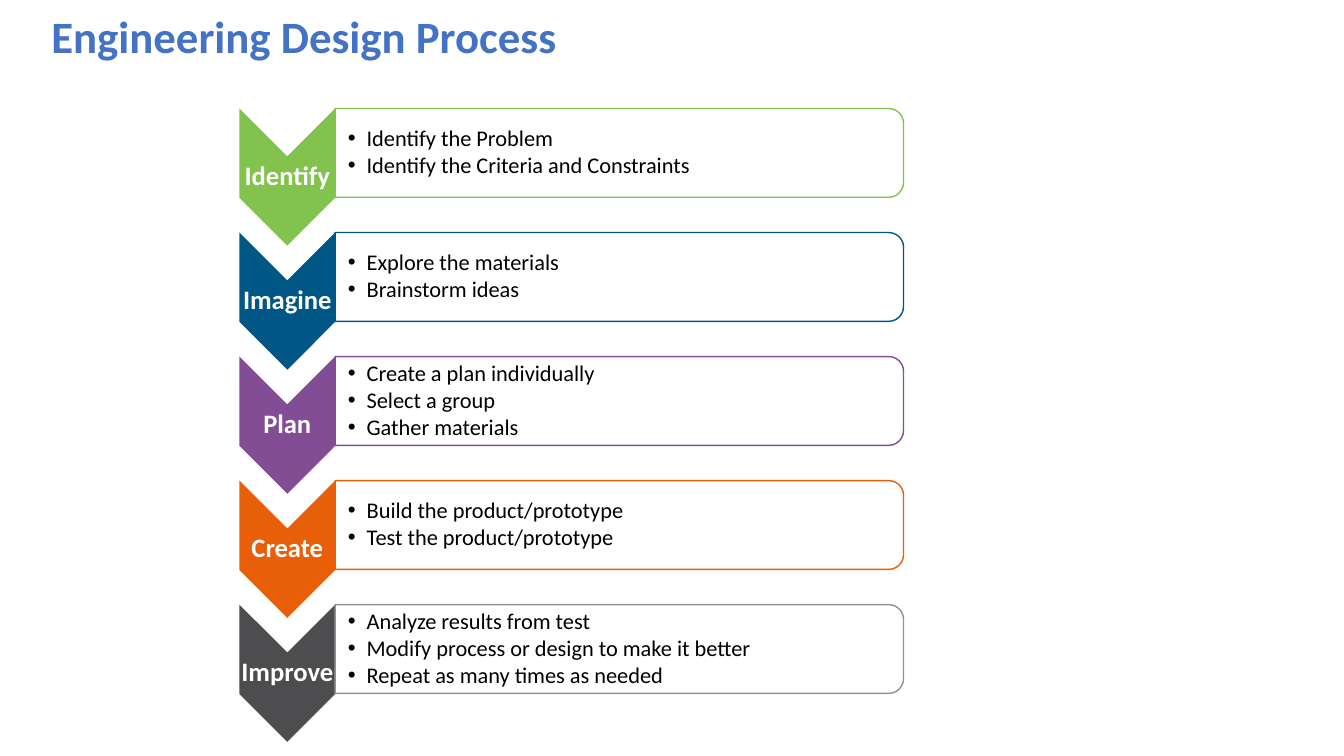
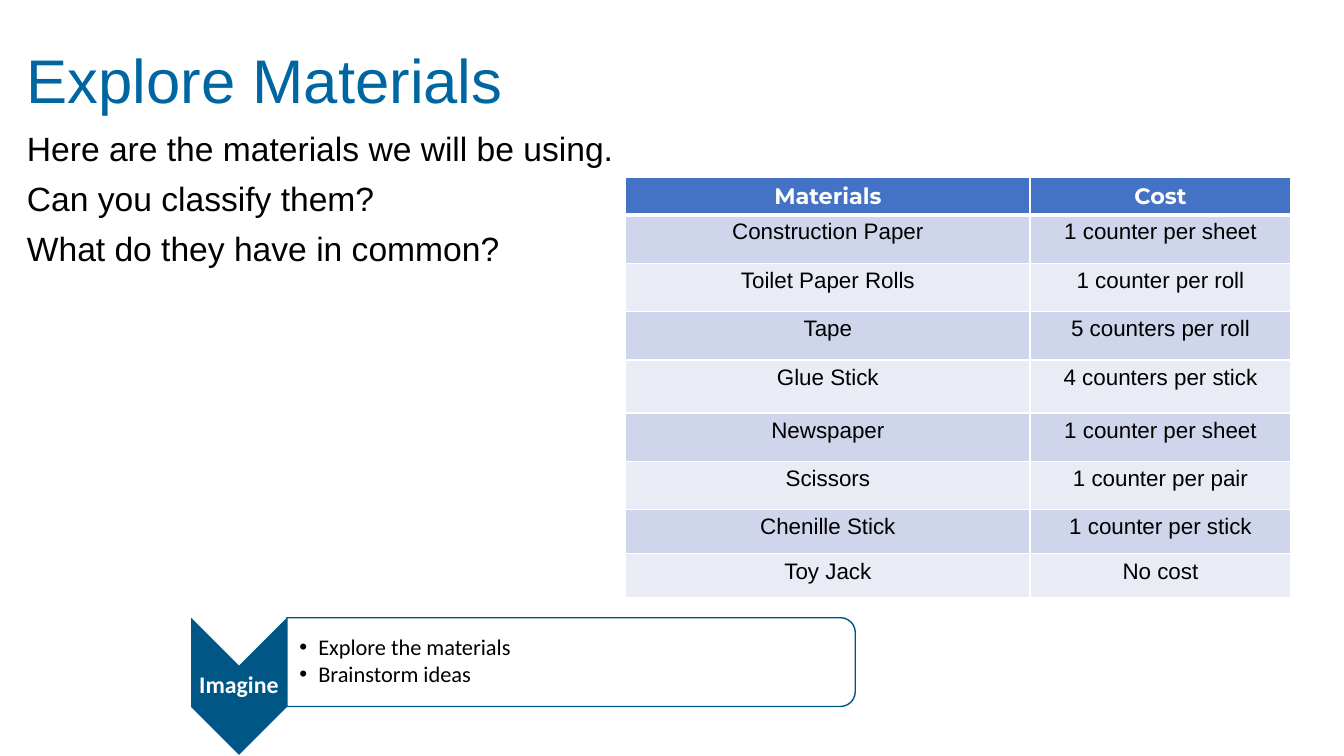
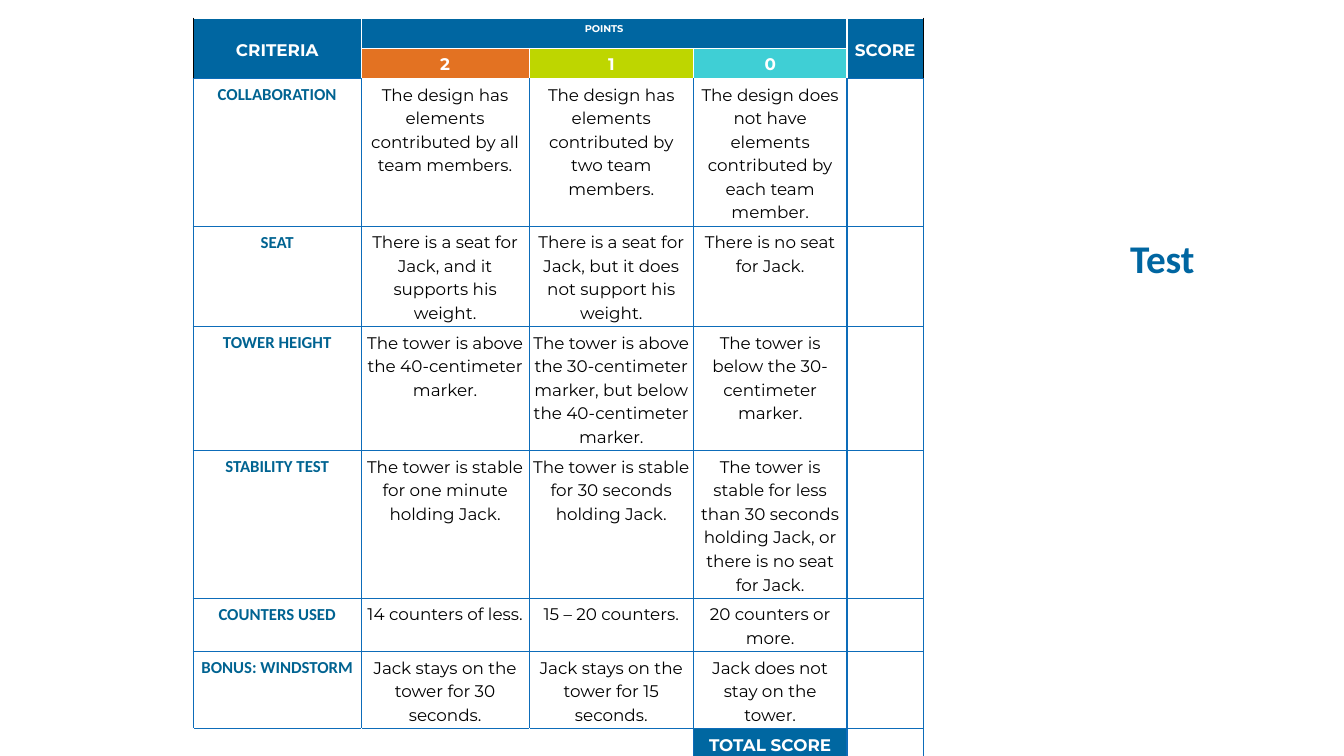
from dataclasses import dataclass

from lxml import etree
from pptx import Presentation
from pptx.dml.color import RGBColor
from pptx.enum.shapes import MSO_SHAPE
from pptx.enum.text import MSO_ANCHOR, MSO_AUTO_SIZE, PP_ALIGN
from pptx.oxml.ns import qn
from pptx.util import Pt

CHEVRON = MSO_SHAPE.CHEVRON
PANEL = MSO_SHAPE.ROUND_2_SAME_RECTANGLE
LEFT, CENTER = PP_ALIGN.LEFT, PP_ALIGN.CENTER
TOP, MIDDLE = MSO_ANCHOR.TOP, MSO_ANCHOR.MIDDLE
NO_AUTOFIT = MSO_AUTO_SIZE.NONE
TITLE_ONLY, TITLE_AND_CONTENT = 5, 1


@dataclass(frozen=True)
class TextStyle:
    font: str
    size: float
    colour: str
    bold: bool = False


class Theme:
    white, black = "FFFFFF", "000000"
    accent, navy, total, border = "4472C4", "0066A1", "0067A1", "0D6CB9"
    green, blue, purple, orange = "82C34D", "005786", "824D94", "E95E09"
    charcoal, grey = "4D4D4F", "919191"
    bands = ("CFD5EA", "E9EBF5")
    points = ("E37222", "BED600", "3FCFD5")

    process_title = TextStyle("Calibri", 32, accent, True)
    materials_title = TextStyle("Arial", 44, navy)
    test_title = TextStyle("Calibri", 28, navy, True)
    body = TextStyle("Arial", 24, black)
    step_label = TextStyle("Calibri", 19, white, True)
    small_step_label = TextStyle("Calibri", 17, white, True)
    step_list = TextStyle("Calibri", 16, black)
    materials_head = TextStyle("Montserrat", 16, white, True)
    materials_cell = TextStyle("Arial", 16, black)
    rubric_head = TextStyle("Montserrat", 12, white, True)
    rubric_points = TextStyle("Montserrat", 7, white, True)
    rubric_name = TextStyle("Calibri", 12, "006391", True)
    rubric_cell = TextStyle("Montserrat", 12, black)


def edges(colour, sides="LRTB", width=1):
    return {side: (colour, width) for side in sides}


def set_margins(target, left, top, right, bottom):
    target.margin_left, target.margin_top = Pt(left), Pt(top)
    target.margin_right, target.margin_bottom = Pt(right), Pt(bottom)


def add_bullet(para, indent):
    properties = para._p.get_or_add_pPr()
    properties.set("marL", str(Pt(indent)))
    properties.set("indent", str(-Pt(indent)))
    etree.SubElement(properties, qn("a:buFont")).set("typeface", "Arial")
    etree.SubElement(properties, qn("a:buChar")).set("char", "•")


def remove_bullet(para):
    properties = para._p.get_or_add_pPr()
    properties.set("marL", "0")
    properties.set("indent", "0")
    etree.SubElement(properties, qn("a:buNone"))


def draw_borders(cell, borders):
    properties = cell._tc.get_or_add_tcPr()
    for side in "LRTB":
        if side in borders:
            colour, width = borders[side]
            line = etree.SubElement(properties, qn("a:ln" + side))
            line.set("w", str(Pt(width)))
            fill = etree.SubElement(line, qn("a:solidFill"))
            etree.SubElement(fill, qn("a:srgbClr")).set("val", colour)


class Deck:
    CHEVRON_WIDTH, CHEVRON_HEIGHT = 68.4, 98
    PANEL_WIDTH, PANEL_HEIGHT = 406, 63.4

    def __init__(self, theme):
        self.theme = theme
        self.file = Presentation()
        self.file.slide_width, self.file.slide_height = Pt(960), Pt(540)
        self.page = None

    def add_page(self, layout):
        self.page = self.file.slides.add_slide(self.file.slide_layouts[layout])

    def format_text(self, para, style, align=LEFT, spacing=0.9):
        para.alignment, para.line_spacing = align, spacing
        for span in para.runs:
            font = span.font
            font.name, font.size, font.bold = style.font, Pt(style.size), style.bold
            font.color.rgb = RGBColor.from_string(style.colour)

    def place(self, box, left, top, width, height):
        box.left, box.top = Pt(left), Pt(top)
        box.width, box.height = Pt(width), Pt(height)

    def title(self, text, style, area, bottom_margin=3.6):
        box = self.page.shapes.title
        self.place(box, *area)
        frame = box.text_frame
        frame.text = text
        frame.word_wrap, frame.auto_size = True, NO_AUTOFIT
        frame.vertical_anchor = MIDDLE
        set_margins(frame, 7.2, 3.6, 7.2, bottom_margin)
        self.format_text(frame.paragraphs[0], style)

    def body(self, lines, area):
        box = self.page.placeholders[1]
        self.place(box, *area)
        frame = box.text_frame
        frame.text = "\n".join(lines)
        frame.word_wrap, frame.auto_size = True, NO_AUTOFIT
        frame.vertical_anchor = TOP
        for index, para in enumerate(frame.paragraphs):
            remove_bullet(para)
            para.space_before = Pt(10 if index else 0)
            self.format_text(para, self.theme.body)

    def turned_shape(self, kind, left, top, width, height):
        """Add a shape turned by 90° that covers the given area."""
        shift = (width - height) / 2
        shape = self.page.shapes.add_shape(
            kind, Pt(left + shift), Pt(top - shift), Pt(height), Pt(width))
        shape.rotation = 90
        shape.shadow.inherit = False
        shape.fill.solid()
        return shape

    def text_box(self, text, left, top, width, height, left_margin, wrap):
        box = self.page.shapes.add_textbox(Pt(left), Pt(top), Pt(width), Pt(height))
        frame = box.text_frame
        frame.word_wrap, frame.vertical_anchor = wrap, MIDDLE
        set_margins(frame, left_margin, 0.8, 0.8, 0.8)
        frame.text = text
        return frame

    def step(self, left, top, name, items, colour, outline, label_style):
        """Add a process step: a labelled chevron and its panel of bullets."""
        width, height = self.CHEVRON_WIDTH, self.CHEVRON_HEIGHT
        chevron = self.turned_shape(CHEVRON, left, top, width, height)
        chevron.fill.fore_color.rgb = RGBColor.from_string(colour)
        chevron.line.fill.background()
        label = self.text_box(name, left, top + height / 2 - 15, width, 30, 0.8, False)
        self.format_text(label.paragraphs[0], label_style, CENTER)

        panel_left = left + width
        panel = self.turned_shape(
            PANEL, panel_left, top, self.PANEL_WIDTH, self.PANEL_HEIGHT)
        panel.fill.fore_color.rgb = RGBColor.from_string(self.theme.white)
        panel.line.color.rgb = RGBColor.from_string(outline)
        panel.line.width = Pt(1)
        frame = self.text_box("\n".join(items), panel_left, top + 3,
                              self.PANEL_WIDTH - 4, self.PANEL_HEIGHT - 6, 9, True)
        for para in frame.paragraphs:
            add_bullet(para, 13.5)
            para.space_after = Pt(2)
            self.format_text(para, self.theme.step_list)

    def table(self, left, top, columns, rows):
        frame = self.page.shapes.add_table(
            len(rows), len(columns), Pt(left), Pt(top), Pt(sum(columns)), Pt(sum(rows)))
        table = frame.table
        table.first_row = table.horz_banding = False
        for column, width in zip(table.columns, columns):
            column.width = Pt(width)
        for row, height in zip(table.rows, rows):
            row.height = Pt(height)
        return table

    def cell(self, cell, text, style, fill, borders, anchor=TOP, spacing=1.0, margins=None):
        draw_borders(cell, borders)
        if fill:
            cell.fill.solid()
            cell.fill.fore_color.rgb = RGBColor.from_string(fill)
        else:
            cell.fill.background()
        cell.vertical_anchor = anchor
        if margins is not None:
            set_margins(cell, *[margins] * 4)
        cell.text = text
        para = cell.text_frame.paragraphs[0]
        self.format_text(para, style, CENTER, spacing)
        if not text:
            end = etree.SubElement(para._p, qn("a:endParaRPr"))
            end.set("sz", str(style.size * 100))

    def materials_table(self, left, top, columns, rows, records):
        theme = self.theme
        table = self.table(left, top, columns, rows)
        for row, record in enumerate(records):
            style = theme.materials_cell if row else theme.materials_head
            fill = theme.bands[(row - 1) % 2] if row else theme.accent
            borders = edges(theme.white)
            if row < 2:
                borders.update(edges(theme.white, "T" if row else "B", 3))
            for column, text in enumerate(record):
                self.cell(table.cell(row, column), text, style, fill, borders)

    def rubric_table(self, left, top, columns, rows, records):
        theme = self.theme
        table = self.table(left, top, columns, rows)
        last = len(rows) - 1

        def put(row, column, text, style, fill, borders, anchor=TOP):
            self.cell(table.cell(row, column), text, style, fill, borders, anchor, 1.15, 2.2)

        for column, text, outer in ((0, "CRITERIA", "L"), (4, "SCORE", "R")):
            borders = edges(theme.white) | edges(theme.black, outer) | edges(theme.border, "B")
            put(0, column, text, theme.rubric_head, theme.navy, borders, MIDDLE)
            put(1, column, "", theme.rubric_head, theme.navy, borders)
            table.cell(0, column).merge(table.cell(1, column))
        for column, fill in enumerate(theme.points, 1):
            put(0, column, "POINTS" if column == 1 else "", theme.rubric_points,
                theme.navy, edges(theme.white))
            put(1, column, str(3 - column), theme.rubric_head, fill, edges(theme.white))
        table.cell(0, 1).merge(table.cell(0, 3))

        for row, record in enumerate(records, 2):
            for column, text in enumerate((*record, "")):
                borders = edges(theme.border)
                if row == 2 and 0 < column < 4:
                    borders.update(edges(theme.white, "T"))
                style = theme.rubric_cell if column else theme.rubric_name
                put(row, column, text, style, None, borders)

        for column in range(3):
            put(last, column, "", theme.rubric_cell, None,
                edges(theme.border, "RT" if column == 2 else "T"))
        put(last, 3, "TOTAL SCORE", theme.rubric_head, theme.total,
            edges(theme.border), MIDDLE)
        put(last, 4, "", theme.rubric_cell, None, edges(theme.border))


IMAGINE = ("Imagine", ("Explore the materials", "Brainstorm ideas"), Theme.blue, Theme.blue)
STEPS = (
    ("Identify", ("Identify the Problem", "Identify the Criteria and Constraints"),
     Theme.green, Theme.green),
    IMAGINE,
    ("Plan", ("Create a plan individually", "Select a group", "Gather materials"),
     Theme.purple, Theme.purple),
    ("Create", ("Build the product/prototype", "Test the product/prototype"),
     Theme.orange, Theme.orange),
    ("Improve", ("Analyze results from test", "Modify process or design to make it better",
                 "Repeat as many times as needed"), Theme.charcoal, Theme.grey),
)
MATERIALS = (
    ("Materials", "Cost"),
    ("Construction Paper", "1 counter per sheet"),
    ("Toilet Paper Rolls", "1 counter per roll"),
    ("Tape", "5 counters per roll"),
    ("Glue Stick", "4 counters per stick"),
    ("Newspaper", "1 counter per sheet"),
    ("Scissors", "1 counter per pair"),
    ("Chenille Stick", "1 counter per stick"),
    ("Toy Jack", "No cost"),
)
RUBRIC = (
    ("COLLABORATION", "The design has elements contributed by all team members.",
     "The design has elements contributed by two team members.",
     "The design does not have elements contributed by each team member."),
    ("SEAT", "There is a seat for Jack, and it supports his weight.",
     "There is a seat for Jack, but it does not support his weight.",
     "There is no seat for Jack."),
    ("TOWER HEIGHT", "The tower is above the 40-centimeter marker.",
     "The tower is above the 30-centimeter marker, but below the 40-centimeter marker.",
     "The tower is below the 30-centimeter marker."),
    ("STABILITY TEST", "The tower is stable for one minute holding Jack.",
     "The tower is stable for 30 seconds holding Jack.",
     "The tower is stable for less than 30 seconds holding Jack, or there is no seat for Jack."),
    ("COUNTERS USED", "14 counters of less.", "15 – 20 counters.", "20 counters or more."),
    ("BONUS: WINDSTORM", "Jack stays on the tower for 30 seconds.",
     "Jack stays on the tower for 15 seconds.", "Jack does not stay on the tower."),
)


def main():
    theme = Theme()
    deck = Deck(theme)

    deck.add_page(TITLE_ONLY)
    deck.title("Engineering Design Process", theme.process_title,
               (29.5, -7, 698, 104), bottom_margin=38.6)
    for index, step in enumerate(STEPS):
        deck.step(171, 77.5 + index * 88.6, *step, theme.step_label)

    deck.add_page(TITLE_AND_CONTENT)
    deck.title("Explore Materials", theme.materials_title, (12, 8, 828, 104))
    deck.step(136.5, 441.2, *IMAGINE, theme.small_step_label)
    deck.body(("Here are the materials we will be using.", "Can you classify them?",
               "What do they have in common?"), (12, 90.7, 456, 106))
    deck.materials_table(447, 127, (288.7, 186.5),
                         (25.4, 34.6, 34.6, 34.6, 37.8, 34.6, 34.6, 31.5, 31.5), MATERIALS)

    deck.add_page(TITLE_ONLY)
    deck.title("Test", theme.test_title, (800, 166, 104, 41))
    deck.rubric_table(138, 13, (120, 120, 117.4, 109.6, 54.6),
                      (21.6, 21.6, 85, 53.3, 85, 85, 37.4, 53.3, 21.6), RUBRIC)

    deck.file.save("out.pptx")


if __name__ == "__main__":
    main()
